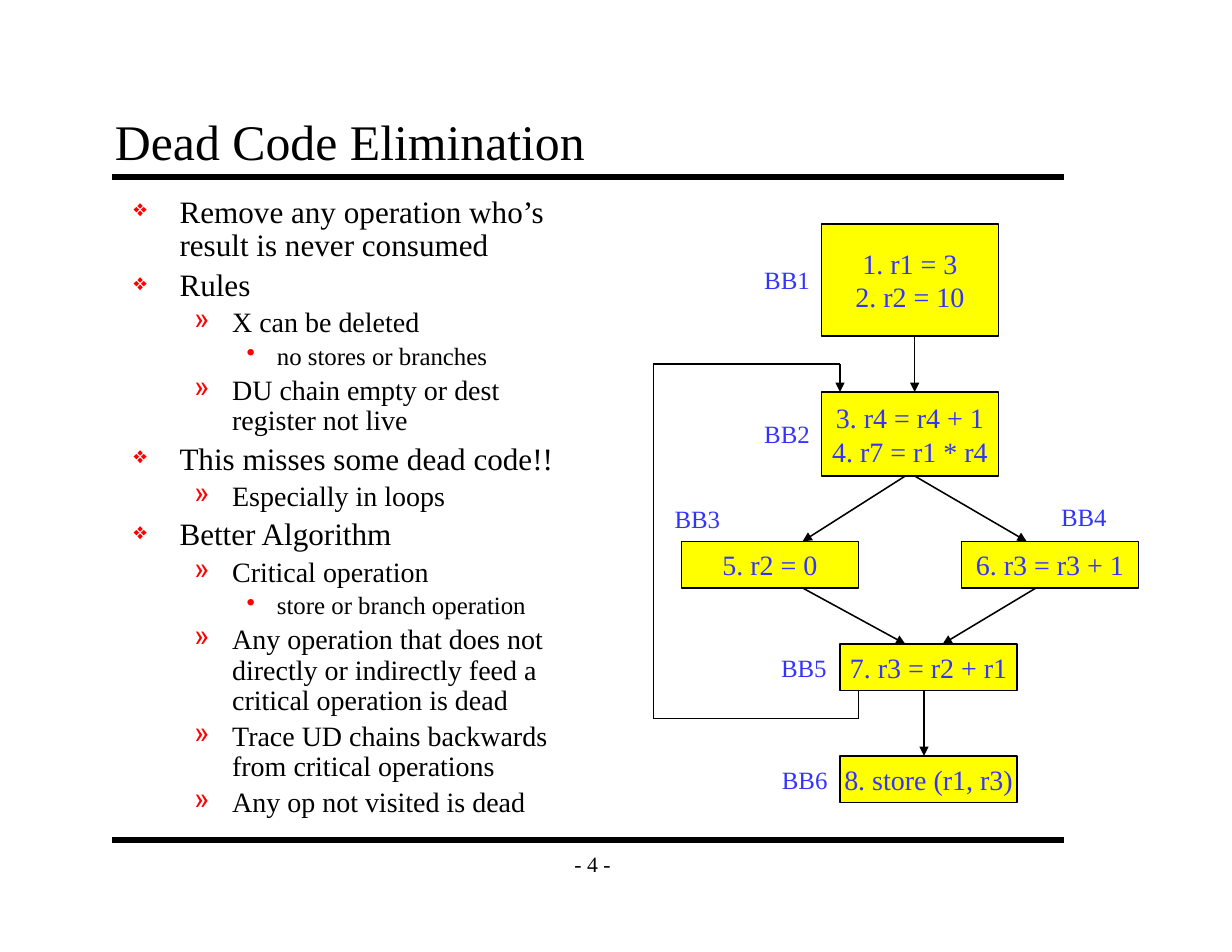
from lxml.etree import SubElement
from pptx import Presentation
from pptx.dml.color import RGBColor
from pptx.enum.shapes import MSO_CONNECTOR, MSO_SHAPE
from pptx.enum.text import MSO_ANCHOR, PP_ALIGN
from pptx.oxml.ns import qn
from pptx.util import Inches, Pt

# The grid has 12 cells to the inch: 132 columns by 102 rows
CELL = Inches(1) / 12
FONT = "Times New Roman"
BLACK, BLUE, RED, YELLOW = "000000", "3333FF", "FF0000", "FFFF00"

# Per list level: text size, left indent, hang, bullet, bullet size in percent
LEVELS = [(20, 0.41, 0.41, "❖", 75),
          (18, 0.88, 0.34, "»", 100),
          (16, 1.28, 0.27, "•", 100)]

ITEMS = [(0, "Remove any operation who’s result is never consumed"),
         (0, "Rules"),
         (1, "X can be deleted"),
         (2, "no stores or branches"),
         (1, "DU chain empty or dest register not live"),
         (0, "This misses some dead code!!"),
         (1, "Especially in loops"),
         (0, "Better Algorithm"),
         (1, "Critical operation"),
         (2, "store or branch operation"),
         (1, "Any operation that does not directly or indirectly feed a "
             "critical operation is dead"),
         (1, "Trace UD chains backwards from critical operations"),
         (1, "Any op not visited is dead")]

# Blocks: column, row, height, code lines, then name with its column and row
BLOCKS = [(88, 24, 12, ["1. r1 = 3", "2. r2 = 10"], "BB1", 80.7, 27.8),
          (88, 42, 9, ["3. r4 = r4 + 1", "4. r7 = r1 * r4"], "BB2", 80.7, 44.3),
          (73, 58, 5, ["5. r2 = 0"], "BB3", 71.1, 53.4),
          (103, 58, 5, ["6. r3 = r3 + 1"], "BB4", 112.5, 53.1),
          (90, 69, 5, ["7. r3 = r2 + r1"], "BB5", 82.5, 69.3),
          (90, 81, 5, ["8. store (r1, r3)"], "BB6", 82.6, 81.3)]
WIDE = 19

FLOWS = [[(98, 36), (98, 42)], [(97, 51), (86, 58)], [(98, 51), (110, 58)],
         [(86, 63), (97, 69)], [(111, 63), (101, 69)], [(99, 74), (99, 81)],
         # Loop from BB5 back to BB2
         [(92, 74), (92, 77), (70, 77), (70, 39), (90, 39), (90, 42)]]


def grid(*cells):
    return [round(n * CELL) for n in cells]


def color(code):
    return RGBColor.from_string(code)


def apply(item, form):
    for name, value in form.items():
        setattr(item, name, value)


def write(frame, lines, size, ink=BLACK, align=PP_ALIGN.LEFT, **form):
    apply(frame, {"word_wrap": False, **form})
    for i, line in enumerate(lines):
        para = frame.paragraphs[0] if i == 0 else frame.add_paragraph()
        para.alignment = align
        run = para.add_run()
        run.text = line
        apply(run.font, {"name": FONT, "size": Pt(size)})
        run.font.color.rgb = color(ink)


def text(slide, at, lines, size, **form):
    frame = slide.shapes.add_textbox(*grid(*at)).text_frame
    write(frame, lines, size, **form)
    return frame


def pad():
    side, end = Inches(0.11), Inches(0.06)
    return {"margin_left": side, "margin_right": side,
            "margin_top": end, "margin_bottom": end}


def bullet(para, level):
    size, left, hang, mark, share = LEVELS[level]
    para.level = level
    para.line_spacing = 0.9
    para.runs[0].font.size = Pt(size)
    props = para._p.get_or_add_pPr()
    props.set("marL", str(Inches(left)))
    props.set("indent", str(-Inches(hang)))
    gap = SubElement(props, qn("a:spcBef"))
    SubElement(gap, qn("a:spcPct"), val="20000")
    tint = SubElement(props, qn("a:buClr"))
    SubElement(tint, qn("a:srgbClr"), val=RED)
    SubElement(props, qn("a:buSzPct"), val=str(share * 1000))
    SubElement(props, qn("a:buChar"), char=mark)


def outline(slide):
    lines = [line for _, line in ITEMS]
    frame = text(slide, (13, 20.3, 49.5, 68.4), lines, 20,
                 **{**pad(), "word_wrap": True})
    for para, (level, _) in zip(frame.paragraphs, ITEMS):
        bullet(para, level)


def line(slide, start, end, width=1, arrow=False):
    link = slide.shapes.add_connector(MSO_CONNECTOR.STRAIGHT,
                                      *grid(*start, *end))
    link.line.color.rgb = color(BLACK)
    link.line.width = Pt(width)
    if arrow:
        SubElement(link.line._get_or_add_ln(), qn("a:tailEnd"),
                   type="triangle")
    SubElement(link._element.spPr, qn("a:effectLst"))


def flow(slide, stops):
    last = len(stops) - 2
    for i, (start, end) in enumerate(zip(stops, stops[1:])):
        line(slide, start, end, arrow=i == last)


def block(slide, col, row, high, code, name, left, top):
    box = slide.shapes.add_shape(MSO_SHAPE.RECTANGLE,
                                 *grid(col, row, WIDE, high))
    box.shadow.inherit = False
    box.fill.solid()
    box.fill.fore_color.rgb = color(YELLOW)
    box.line.color.rgb = color(BLACK)
    box.line.width = Pt(1)
    write(box.text_frame, code, 18, ink=BLUE, align=PP_ALIGN.CENTER,
          vertical_anchor=MSO_ANCHOR.MIDDLE)
    text(slide, (left, top, 7.3, 4.4), [name], 16, ink=BLUE)


def main():
    deck = Presentation()
    apply(deck, {"slide_width": Inches(11), "slide_height": Inches(8.5)})
    slide = deck.slides.add_slide(deck.slide_layouts[6])

    # Page rules, number and title
    for row in (19, 90):
        line(slide, (12, row), (114, row), width=4)
    text(slide, (59, 90, 9, 5), ["- 4 -"], 14, align=PP_ALIGN.CENTER,
         vertical_anchor=MSO_ANCHOR.MIDDLE, **pad())
    text(slide, (11, 11, 102, 8), ["Dead Code Elimination"], 32,
         **{**pad(), "word_wrap": True,
            "vertical_anchor": MSO_ANCHOR.BOTTOM})

    # Bullet list
    outline(slide)

    # Flow graph
    for spec in BLOCKS:
        block(slide, *spec)
    for stops in FLOWS:
        flow(slide, stops)

    deck.save("out.pptx")


if __name__ == "__main__":
    main()
